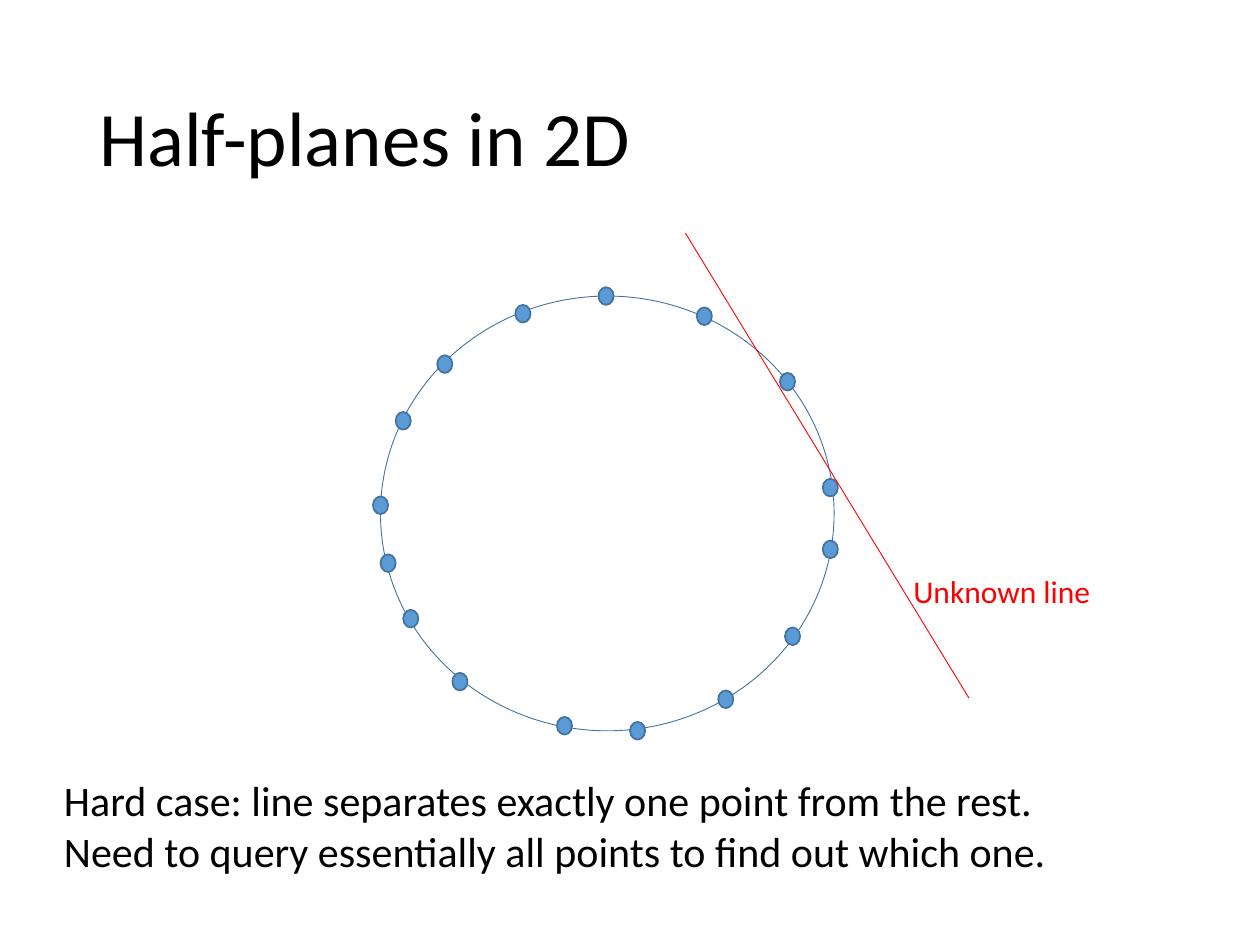
from lxml.etree import SubElement
from pptx import Presentation
from pptx.dml.color import RGBColor
from pptx.enum.shapes import MSO_CONNECTOR as Connector, MSO_SHAPE as Shape
from pptx.enum.text import MSO_ANCHOR as Anchor, MSO_AUTO_SIZE as AutoSize
from pptx.oxml.ns import qn
from pptx.util import Inches, Pt

BLACK = RGBColor(0x00, 0x00, 0x00)
RED = RGBColor(0xFF, 0x00, 0x00)
BLUE = RGBColor(0x5B, 0x9B, 0xD5)
DARK_BLUE = RGBColor(0x43, 0x73, 0x9E)

# The slide is a grid of 100 columns and 75 rows
COLUMNS, ROWS = 100, 75

# Centres of the points around the circle, clockwise from the left (column, row)
POINTS = [
    (30.2, 40.1), (32, 33.4), (35.3, 28.9), (41.5, 24.9),
    (48.1, 23.5), (55.9, 25.1), (62.5, 30.3), (65.9, 38.7),
    (65.9, 43.6), (62.9, 50.5), (57.6, 55.5), (50.6, 58),
    (44.8, 57.6), (36.5, 54.1), (32.6, 49.1), (30.8, 44.7),
]


def write_text(frame, text, size=18, color=BLACK, font="Calibri", spacing=None):
    """Fill a text frame, one paragraph per line of text."""
    frame.text = text
    for paragraph in frame.paragraphs:
        paragraph.line_spacing = spacing
        for run in paragraph.runs:
            run.font.name = font
            run.font.size = Pt(size)
            run.font.color.rgb = color


class Sketch:
    """Holds the slide and the style, and draws on the grid."""

    def __init__(self, deck, outline=DARK_BLUE):
        self.shapes = deck.slides.add_slide(deck.slide_layouts[6]).shapes
        self.outline = outline
        self.column = deck.slide_width / COLUMNS
        self.row = deck.slide_height / ROWS

    def grid(self, column, row):
        return round(column * self.column), round(row * self.row)

    def text(self, corner, extent, words, wrap=False, anchor=Anchor.TOP, **style):
        box = self.shapes.add_textbox(*self.grid(*corner), *self.grid(*extent))
        frame = box.text_frame
        frame.word_wrap = wrap
        frame.auto_size = AutoSize.NONE if wrap else AutoSize.SHAPE_TO_FIT_TEXT
        frame.vertical_anchor = anchor
        write_text(frame, words, **style)

    def ellipse(self, center, extent, width, fill=None):
        corner = [middle - length / 2 for middle, length in zip(center, extent)]
        oval = self.shapes.add_shape(
            Shape.OVAL, *self.grid(*corner), *self.grid(*extent))
        oval.shadow.inherit = False
        if fill is None:
            oval.fill.background()
        else:
            oval.fill.solid()
            oval.fill.fore_color.rgb = fill
        oval.line.color.rgb = self.outline
        oval.line.width = Pt(width)

    def line(self, start, end, color, width):
        stroke = self.shapes.add_connector(
            Connector.STRAIGHT, *self.grid(*start), *self.grid(*end))
        stroke.line.color.rgb = color
        stroke.line.width = Pt(width)
        SubElement(stroke._element.spPr, qn("a:effectLst"))


def main():
    deck = Presentation()
    deck.slide_width, deck.slide_height = Inches(10), Inches(7.5)
    sketch = Sketch(deck)

    # Title
    sketch.text((6.9, 4), (86.2, 14.5), "Half-planes in 2D", wrap=True,
                anchor=Anchor.MIDDLE, size=44, spacing=0.9)

    # Circle and the points on it
    sketch.ellipse((48.2, 40.75), (36, 34.5), width=0.5)
    for point in POINTS:
        sketch.ellipse(point, (1.2, 1.4), width=1, fill=BLUE)

    # Separating line and its label
    sketch.line((54.4, 18.5), (76.9, 55.4), RED, width=0.5)
    sketch.text((71.5, 44.9), (16.2, 4), "Unknown line", color=RED)

    # Conclusion
    sketch.text((4.1, 61), (80.7, 9.1),
                "Hard case: line separates exactly one point from the rest.\n"
                "Need to query essentially all points to find out which one.",
                size=24)

    deck.save("out.pptx")


if __name__ == "__main__":
    main()
